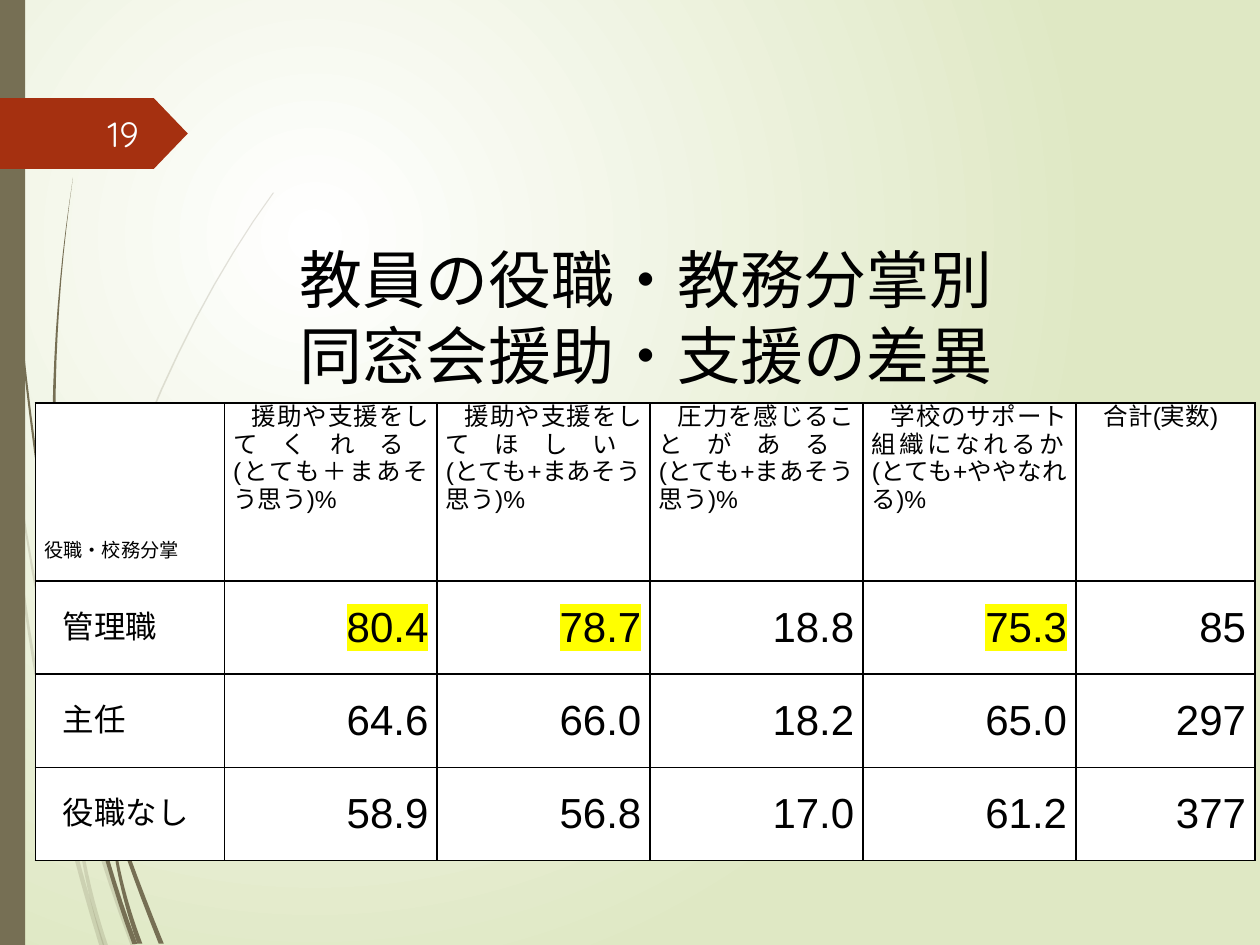
from dataclasses import dataclass
from typing import Optional

from lxml.etree import SubElement
from pptx import Presentation
from pptx.dml.color import RGBColor
from pptx.enum.shapes import MSO_SHAPE as Shape
from pptx.enum.text import MSO_ANCHOR as Anchor, MSO_AUTO_SIZE as AutoSize, PP_ALIGN as Align
from pptx.oxml.ns import qn
from pptx.util import Inches, Pt

WHITE = RGBColor(0xFF, 0xFF, 0xFF)
BLACK = RGBColor(0, 0, 0)
PALE_GREEN = RGBColor(0xDF, 0xE8, 0xC4)
OLIVE = RGBColor(0x76, 0x6F, 0x54)
RED = RGBColor(0xA5, 0x30, 0x10)
NUMBER_WHITE = RGBColor(0xFE, 0xFF, 0xFF)
YELLOW = RGBColor(0xFF, 0xFF, 0x00)

W, H = Inches(10), Inches(7.5)
INDENT = 0.15       # first-line indent of table text, inches
BLADE_STEPS = 16    # straight pieces along each side of a blade


@dataclass
class Blade:
    """A curve through four evenly spaced points (inches), widening from tip to root."""
    points: tuple
    root_width: float = 0.04
    tip_width: float = 0.01

    def at(self, t: float) -> tuple:
        """Cubic interpolation: t runs from 0 (first point) to 1 (last point)."""
        u = 3 * t
        weights = (-(u - 1) * (u - 2) * (u - 3) / 6, u * (u - 2) * (u - 3) / 2,
                   -u * (u - 1) * (u - 3) / 2, u * (u - 1) * (u - 2) / 6)
        return tuple(sum(w * p[axis] for w, p in zip(weights, self.points)) for axis in (0, 1))

    def outline(self) -> list:
        """Down the left side, then back up the right side."""
        left, right = [], []
        for step in range(BLADE_STEPS + 1):
            t = step / BLADE_STEPS
            x, y = self.at(t)
            half = (self.tip_width + (self.root_width - self.tip_width) * t) / 2
            left.append((Inches(x - half), Inches(y)))
            right.append((Inches(x + half), Inches(y)))
        return left + right[::-1]


@dataclass
class Tuft:
    opacity: int
    blades: list


@dataclass
class CellStyle:
    size: float
    align: Align = Align.JUSTIFY
    anchor: Anchor = Anchor.MIDDLE
    indent: float = INDENT
    bottom: float = 0
    highlight: Optional[RGBColor] = None


TUFTS = [
    Tuft(20, [
        Blade(((0.1, 3.5), (0.31, 4.8), (0.62, 6.15), (1.06, 7.51))),          # right stem
        Blade(((0.08, 3.5), (0.2, 4.8), (0.45, 6.17), (0.81, 7.51))),          # left stem
        Blade(((2.17, 1.53), (1.37, 2.9), (0.8, 4.45), (0.6, 5.9)), 0.02),     # leaning leaf
        Blade(((0.59, 5.9), (0.61, 6.45), (0.7, 7), (0.84, 7.51))),            # short shoot
        Blade(((0, 2.9), (0.03, 3.1), (0.05, 3.3), (0.08, 3.5)), 0.01),        # edge leaf
    ]),
    Tuft(100, [
        Blade(((0.5, 4.72), (0.67, 5.65), (0.93, 6.55), (1.28, 7.49))),        # right stem
        Blade(((0.47, 4.77), (0.59, 5.68), (0.79, 6.6), (1.07, 7.49))),        # left stem
        Blade(((2.16, 3.44), (1.5, 4.37), (1.05, 5.4), (0.9, 6.35)), 0.02),    # leaning leaf
        Blade(((0.88, 6.33), (0.91, 6.72), (0.99, 7.11), (1.11, 7.49))),       # short shoot
        Blade(((0.03, 0), (0.08, 1.6), (0.23, 3.2), (0.47, 4.8)), 0.02),       # edge leaf
        Blade(((0.58, 1.41), (0.46, 2.5), (0.43, 3.6), (0.49, 4.72)), 0.04, 0),  # upright leaf
    ]),
]

STRONGLY_AGREE = "(とても+まあそう思う)%"
HEADERS = ["援助や支援をしてくれる\v(とても＋まあそう思う)%",
           "援助や支援をしてほしい\v" + STRONGLY_AGREE,
           "圧力を感じることがある\v" + STRONGLY_AGREE,
           "学校のサポート組織になれるか\v(とても+ややなれる)%",
           "合計(実数)"]
ROWS = [("管理職", "80.4", "78.7", "18.8", "75.3", "85"),
        ("主任", "64.6", "66.0", "18.2", "65.0", "297"),
        ("役職なし", "58.9", "56.8", "17.0", "61.2", "377")]
HIGHLIGHTED = {"80.4", "78.7", "75.3"}
COL_WIDTHS = [1.5] + [1.69] * 4 + [1.42]
ROW_HEIGHTS = [1.41] + [0.74] * len(ROWS)


def set_all(target, **values) -> None:
    for name, value in values.items():
        setattr(target, name, value)


def paint(sp, color: RGBColor, opacity: int = 100) -> None:
    sp.shadow.inherit = False
    sp.fill.solid()
    sp.fill.fore_color.rgb = color
    sp.line.fill.background()
    if opacity < 100:
        clr = sp._element.spPr.find(".//" + qn("a:srgbClr"))
        SubElement(clr, qn("a:alpha"), val=str(opacity * 1000))


def add_tuft(s, tuft: Tuft) -> None:
    group = s.shapes.add_group_shape()
    for blade in tuft.blades:
        start, *rest = blade.outline()
        builder = group.shapes.build_freeform(*start)
        builder.add_line_segments(rest, close=True)
        paint(builder.convert_to_shape(), OLIVE, tuft.opacity)


def write(p, text: str, size: float, color: RGBColor, align: Align, font: str = "Arial") -> None:
    p.text = text
    p.alignment = align
    for r in p.runs:
        set_all(r.font, name=font, size=Pt(size), bold=False)
        r.font.color.rgb = color
        # The same font for East Asian characters
        rPr = r._r.rPr
        rPr.find(qn("a:latin")).addnext(SubElement(rPr, qn("a:ea"), typeface=font))


def add_borders(cell) -> None:
    # Borders come before the fill in the cell properties
    tcPr = cell._tc.get_or_add_tcPr()
    for i, edge in enumerate(("a:lnL", "a:lnR", "a:lnT", "a:lnB")):
        ln = SubElement(tcPr, qn(edge), w=str(Pt(1)))
        SubElement(SubElement(ln, qn("a:solidFill")), qn("a:srgbClr"), val=str(BLACK))
        tcPr.insert(i, ln)


def fill_cell(cell, text: str, style: CellStyle) -> None:
    set_all(cell, margin_left=Inches(0.07), margin_right=Inches(0.07), margin_top=0,
            margin_bottom=Inches(style.bottom), vertical_anchor=style.anchor)
    cell.fill.solid()
    cell.fill.fore_color.rgb = WHITE
    p = cell.text_frame.paragraphs[0]
    write(p, text, style.size, BLACK, style.align)
    p._p.get_or_add_pPr().set("indent", str(Inches(style.indent)))
    if style.highlight is not None:
        rPr = p.runs[0]._r.rPr
        mark = SubElement(rPr, qn("a:highlight"))
        SubElement(mark, qn("a:srgbClr"), val=str(style.highlight))
        rPr.find(qn("a:solidFill")).addnext(mark)
    add_borders(cell)


def set_background(s) -> None:
    fill = s.background.fill
    fill.gradient()
    for stop, color, position in zip(fill.gradient_stops, (WHITE, PALE_GREEN), (0, 1)):
        stop.color.rgb = color
        stop.position = position
    # Circular instead of linear
    grad = s._element.find(".//" + qn("a:gradFill"))
    grad.remove(grad.find(qn("a:lin")))
    circle = SubElement(grad, qn("a:path"), {"path": "circle"})
    SubElement(circle, qn("a:fillToRect"), l="50000", t="50000", r="100000", b="100000")


def add_table(s) -> None:
    size = Inches(sum(COL_WIDTHS)), Inches(sum(ROW_HEIGHTS))
    table = s.shapes.add_table(len(ROW_HEIGHTS), len(COL_WIDTHS),
                               Inches(0.28), Inches(3.2), *size).table
    table.first_row = table.horz_banding = False
    for col, width in zip(table.columns, COL_WIDTHS):
        col.width = Inches(width)
    for row, height in zip(table.rows, ROW_HEIGHTS):
        row.height = Inches(height)
    # Header row
    fill_cell(table.cell(0, 0), "役職・校務分掌",
              CellStyle(11, anchor=Anchor.BOTTOM, indent=0, bottom=0.15))
    for c, text in enumerate(HEADERS, 1):
        fill_cell(table.cell(0, c), text, CellStyle(14, anchor=Anchor.TOP))
    # Data rows: label, percentages, total
    for r, (label, *values) in enumerate(ROWS, 1):
        fill_cell(table.cell(r, 0), label, CellStyle(18))
        for c, value in enumerate(values, 1):
            highlight = YELLOW if value in HIGHLIGHTED else None
            indent = 0 if c == len(values) else INDENT
            fill_cell(table.cell(r, c), value,
                      CellStyle(24, Align.RIGHT, indent=indent, highlight=highlight))


def main() -> None:
    prs = Presentation()
    set_all(prs, slide_width=W, slide_height=H)
    s = prs.slides.add_slide(prs.slide_layouts[5])
    set_background(s)

    # Grass, side bar and number tag
    for tuft in TUFTS:
        add_tuft(s, tuft)
    paint(s.shapes.add_shape(Shape.RECTANGLE, 0, 0, int(W * 0.02), H), OLIVE)
    tag = s.shapes.add_shape(Shape.PENTAGON, 0, *map(Inches, (0.78, 1.49, 0.56)))
    tag.adjustments[0] = 0.48
    paint(tag, RED)

    # Title
    title = s.shapes.title
    set_all(title, left=Inches(1.52), top=Inches(1.86), width=Inches(7.21), height=Inches(1.04))
    tf = title.text_frame
    set_all(tf, auto_size=AutoSize.NONE, vertical_anchor=Anchor.TOP)
    write(tf.paragraphs[0], "教員の役職・教務分掌別\v同窓会援助・支援の差異", 36, BLACK, Align.CENTER)

    add_table(s)

    # Slide number
    tf = s.shapes.add_textbox(*map(Inches, (0.56, 0.86, 0.64, 0.4))).text_frame
    set_all(tf, word_wrap=True, vertical_anchor=Anchor.MIDDLE)
    write(tf.paragraphs[0], "19", 20, NUMBER_WHITE, Align.RIGHT, "Quicksand")

    prs.save("out.pptx")


if __name__ == "__main__":
    main()
